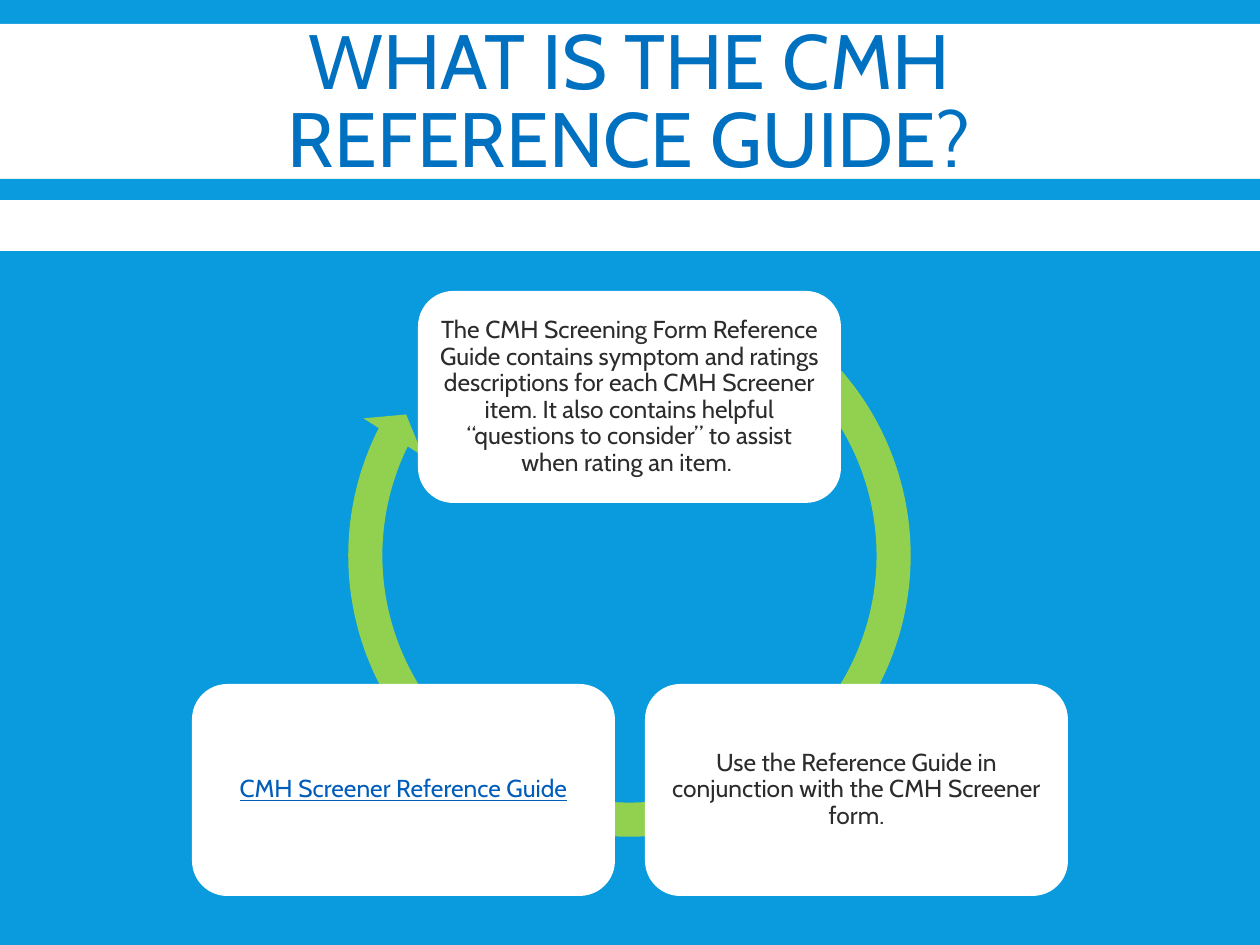
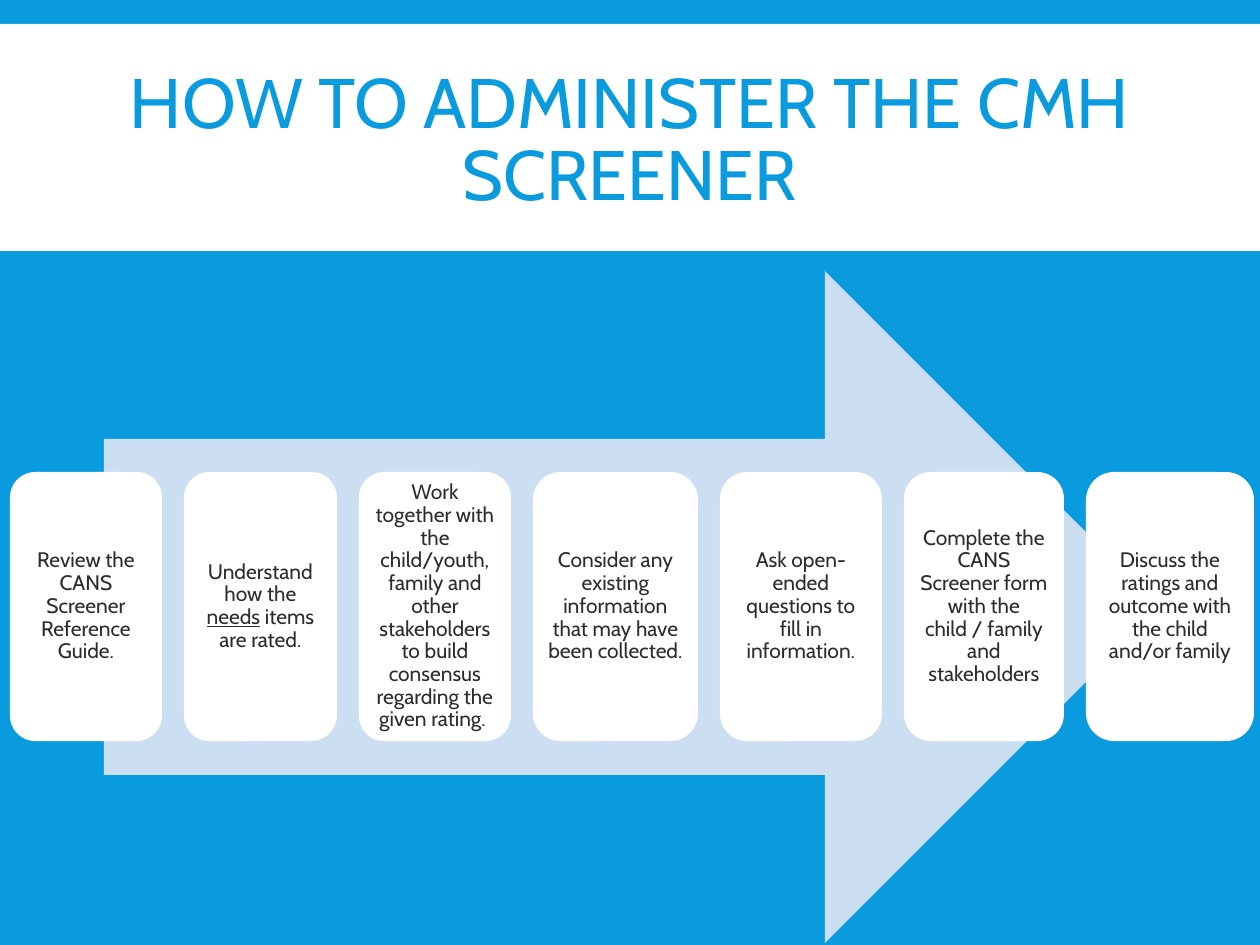
import pptx
import pptx.util
import pptx.dml.color
import pptx.enum.shapes
import pptx.enum.text

EMU_PER_PX = 914400 / 126
PAGE_WIDTH, PAGE_HEIGHT = 1260, 945
FONT = "Cabin"
BLUE, WHITE, INK = "099BDD", "FFFFFF", "2C2C2C"
TITLE_BLUE, LINK_BLUE = "0070C0", "005DBA"
GREEN, PALE_BLUE = "92D050", "CCDEF2"
SHAPES = pptx.enum.shapes.MSO_SHAPE


def px(length):
    return pptx.util.Emu(round(length * EMU_PER_PX))


def color(hex_string):
    return pptx.dml.color.RGBColor.from_string(hex_string)


def place(shape, box):
    shape.left, shape.top, shape.width, shape.height = map(px, box)


def add_shape(page, kind, box, fill):
    shape = page.shapes.add_shape(kind, *map(px, box))
    shape.shadow.inherit = False
    shape.fill.solid()
    shape.fill.fore_color.rgb = color(fill)
    shape.line.fill.background()
    return shape


def write(shape, text, size, ink=INK, spacing=0.9, inset=None):
    """Centre text in a shape; words between underscores are underlined."""
    frame = shape.text_frame
    frame.word_wrap = True
    frame.auto_size = pptx.enum.text.MSO_AUTO_SIZE.NONE
    frame.vertical_anchor = pptx.enum.text.MSO_ANCHOR.MIDDLE
    if inset is not None:
        frame.margin_left = frame.margin_right = px(inset)
        frame.margin_top = frame.margin_bottom = px(inset)
    para = frame.paragraphs[0]
    para.alignment = pptx.enum.text.PP_ALIGN.CENTER
    para.line_spacing = spacing
    para.space_before = pptx.util.Pt(0)
    for index, part in enumerate(text.split("_")):
        if part:
            span = para.add_run()
            span.text = part
            span.font.name = FONT
            span.font.size = pptx.util.Pt(size)
            span.font.color.rgb = color(ink)
            if index % 2:
                span.font.underline = True


def add_card(page, box, text, **text_format):
    card = add_shape(page, SHAPES.ROUNDED_RECTANGLE, box, WHITE)
    write(card, text, **text_format)


def add_page(deck, title, title_box, size, ink):
    """Blue page with a white band behind its title."""
    page = deck.slides.add_slide(deck.slide_layouts[5])
    page.background.fill.solid()
    page.background.fill.fore_color.rgb = color(BLUE)
    heading = page.shapes.title
    place(heading, title_box)
    write(heading, title, size, ink, spacing=0.85)
    band = add_shape(page, SHAPES.RECTANGLE, (0, 24, PAGE_WIDTH, 227), WHITE)
    heading.element.addprevious(band.element)
    return page


def add_cycle(page, box, texts):
    """Three cards on a ring arrow: one on top, two at the bottom."""
    left, top, width, height = box
    card_width, card_height = 423, 212
    middle = left + (width - card_width) // 2
    right, bottom = left + width - card_width, top + height - card_height

    # Ring arrow behind the cards
    ring_size = 599
    ring_box = (left + (width - ring_size) // 2, top - 35, ring_size, ring_size)
    ring = add_shape(page, SHAPES.CIRCULAR_ARROW, ring_box, GREEN)
    for index, value in enumerate((0.057, 3.405, 123.959, 182.883, 0.059)):
        ring.adjustments[index] = value

    # Cards, clockwise from the top
    spots = ((middle, top, INK), (right, bottom, INK), (left, bottom, LINK_BLUE))
    for (x, y, ink), text in zip(spots, texts):
        add_card(page, (x, y, card_width, card_height), text,
                 size=14, ink=ink, inset=8)


def add_process(page, box, steps):
    """A row of step cards, centred on a wide arrow."""
    left, top, width, height = box
    add_shape(page, SHAPES.RIGHT_ARROW, (left + 94, top, 1057, height), PALE_BLUE)
    gap, card_height = 22, 269
    card_top = top + (height - card_height) // 2
    unit = (width - gap * (len(steps) - 1)) / sum(share for share, _ in steps)
    x = left
    for share, text in steps:
        card_width = round(share * unit)
        add_card(page, (x, card_top, card_width, card_height), text,
                 size=12, inset=6)
        x += card_width + gap


def build_guide_page(deck):
    page = add_page(deck, "WHAT IS THE CMH REFERENCE GUIDE?",
                    (220, 21, 819, 168), 44, TITLE_BLUE)
    add_shape(page, SHAPES.RECTANGLE, (0, 179, PAGE_WIDTH, 21), BLUE)
    add_cycle(page, (192, 291, 876, 605), (
        "The CMH Screening Form Reference Guide contains symptom and ratings "
        "descriptions for each CMH Screener item. It also contains helpful "
        "“questions to consider” to assist when rating an item. ",
        "Use the Reference Guide in conjunction with the CMH Screener form.",
        "_CMH Screener Reference Guide_",
    ))


def build_steps_page(deck):
    page = add_page(deck, "HOW TO ADMINISTER THE CMH SCREENER",
                    (94, 39, 1071, 208), 40, BLUE)
    # Relative card width and text of each step
    add_process(page, (10, 271, 1244, 672), (
        (152, "Review the CANS Screener Reference Guide."),
        (153, "Understand how the _needs_ items are rated."),
        (152, "Work together with the child/youth, family and other "
              "stakeholders to build consensus regarding the given rating. "),
        (165, "Consider any existing information that may have been collected."),
        (162, "Ask open-ended questions to fill in information."),
        (160, "Complete the CANS Screener form with the child / family "
              "and stakeholders"),
        (168, "Discuss the ratings and outcome with the child and/or family"),
    ))


def main():
    deck = pptx.Presentation()
    deck.slide_width, deck.slide_height = px(PAGE_WIDTH), px(PAGE_HEIGHT)
    build_guide_page(deck)
    build_steps_page(deck)
    deck.save("out.pptx")


if __name__ == "__main__":
    main()
